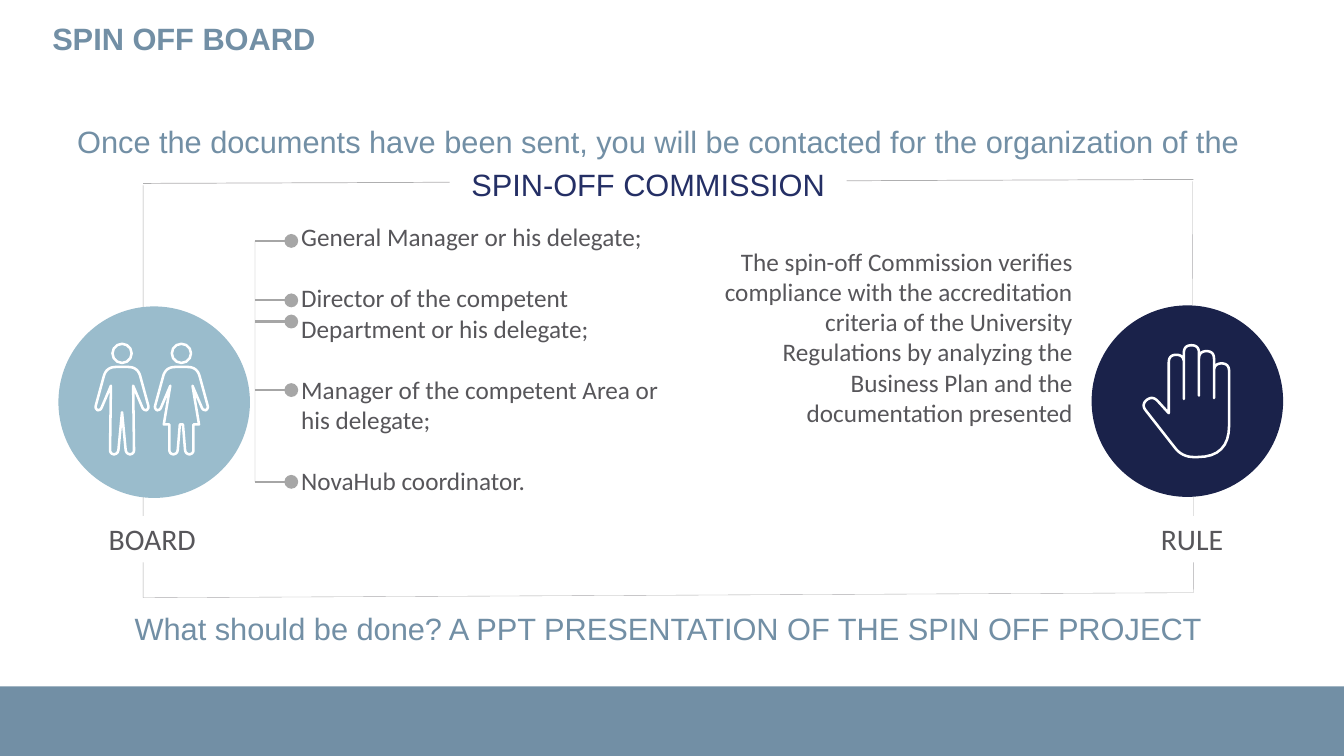
import math
from dataclasses import dataclass
from typing import Optional

import pptx
import pptx.dml.color
import pptx.enum.shapes
import pptx.enum.text
import pptx.oxml
import pptx.oxml.ns
import pptx.presentation
import pptx.shapes.autoshape
import pptx.shapes.base
import pptx.shapes.connector
import pptx.slide
import pptx.util

RGB = pptx.dml.color.RGBColor
SHAPE = pptx.enum.shapes.MSO_SHAPE
ALIGN = pptx.enum.text.PP_ALIGN
ANCHOR = pptx.enum.text.MSO_ANCHOR

STEEL = RGB(0x72, 0x8F, 0xA5)
SKY = RGB(0x9A, 0xBC, 0xCC)
NAVY = RGB(0x1A, 0x22, 0x4A)
INDIGO = RGB(0x24, 0x2F, 0x65)
GRAPHITE = RGB(0x57, 0x56, 0x5A)
CHARCOAL = RGB(0x39, 0x38, 0x3A)
SILVER = RGB(0xA6, 0xA6, 0xA6)
WHITE = RGB(0xFF, 0xFF, 0xFF)

# The slide is a grid of 40 columns by 22.5 rows of square cells.
COLUMNS, ROWS = 40, 22.5
CELL = pptx.util.Inches(1) / 3
BADGE = 5.7
ICON_STROKE = pptx.util.Pt(1.8)


def cells(count: float) -> pptx.util.Emu:
    return pptx.util.Emu(round(count * CELL))


@dataclass(frozen=True)
class Box:
    left: float
    top: float
    width: float
    height: float

    def emu(self) -> tuple[int, ...]:
        return tuple(cells(n) for n in (self.left, self.top, self.width, self.height))


@dataclass(frozen=True)
class Label:
    box: Box
    paragraphs: tuple[str, ...]
    size: float
    color: RGB
    font: str = "Arial"
    align: ALIGN = ALIGN.CENTER
    bold: bool = False
    wrap: bool = True
    fill: Optional[RGB] = None


@dataclass(frozen=True)
class Rule:
    start: tuple[float, float]
    end: tuple[float, float]
    color: RGB = GRAPHITE
    width: float = 0.25
    opacity: int = 50
    dot: bool = False


@dataclass(frozen=True)
class Corner:
    """A point in hundredths of a badge, rounded off over the given radius."""
    x: float
    y: float
    radius: float = 0


FRAME = (
    Rule((35.52, 5.34), (4.26, 5.46), CHARCOAL, 0.5, 40),
    Rule((4.26, 17.79), (4.26, 5.52)),
    Rule((35.52, 17.64), (35.49, 5.4)),
    Rule((4.26, 17.79), (35.52, 17.64)),
)
SPINE, DOT = 7.59, 8.67
DOT_ROWS = (7.17, 8.94, 9.57, 11.61, 14.34)
BRANCHES = (Rule((SPINE, DOT_ROWS[-1]), (SPINE, DOT_ROWS[0])),) + tuple(
    Rule((SPINE, row), (DOT, row), SILVER, 1.5, 100, True) for row in DOT_ROWS)

LABELS = (
    Label(Box(1.26, 0.45, 37.53, 2.76), ("SPIN OFF BOARD",), 22, STEEL,
          align=ALIGN.LEFT, bold=True),
    Label(Box(1.26, 15.36, 6.54, 1.38), ("BOARD",), 21.3, GRAPHITE, "Calibri", fill=WHITE),
    Label(Box(32.49, 15.36, 5.97, 1.38), ("RULE",), 21.3, GRAPHITE, "Calibri", fill=WHITE),
    Label(Box(13.38, 4.77, 11.82, 1.41), ("SPIN-OFF COMMISSION",), 22, INDIGO, fill=WHITE),
    Label(Box(21.18, 7.17, 11.04, 5.76), (
        "The spin-off Commission verifies compliance with the accreditation criteria of the "
        "University Regulations by analyzing the Business Plan and the documentation presented",
    ), 18, GRAPHITE, "Calibri", ALIGN.RIGHT),
    Label(Box(1.77, 3.51, 35.64, 1.41), (
        "Once the documents have been sent, you will be contacted for the organization of the",
    ), 22, STEEL, wrap=False),
    Label(Box(8.67, 6.45, 12.21, 8.49), (
        "General Manager or his delegate;",
        "Director of the competent Department or his delegate;",
        "Manager of the competent Area or his delegate;",
        "NovaHub coordinator.",
    ), 18, GRAPHITE, "Calibri", ALIGN.LEFT),
    Label(Box(1.68, 18, 36.42, 3.15), (
        "What should be done? A PPT PRESENTATION OF THE SPIN OFF PROJECT",
    ), 22, STEEL),
)

BOARD_BADGE = Box(1.74, 9.12, BADGE, BADGE)
RULE_BADGE = Box(32.49, 9.09, BADGE, BADGE)

# Right halves of the figures, measured from the axis of the body.
ARM = (Corner(8.2, 31.6, 5), Corner(14.2, 53.6, 2), Corner(11.4, 54.6, 2), Corner(5.8, 41.4))
FEET = (Corner(6.3, 77.2, 2.5), Corner(2.1, 77.2, 2.5))
MAN = ARM + FEET + (Corner(0, 55, 0.5),)
WOMAN = ARM + (Corner(9.2, 61.6), Corner(6.3, 61.6)) + FEET + (Corner(0.8, 61.6),)
FIGURES = ((33.2, MAN), (64.2, WOMAN))
HEAD_TOP, HEAD_SIZE = 19.5, 10

FINGER_LEFT, FINGER_WIDTH = 40.3, 7.88
FINGERS = ((25.8, 48.9), (20.8, 47.1), (23.9, 48.4))
PALM = (Corner(63.94, 30.3, 4), Corner(71.8, 30.3, 4), Corner(71.8, 79.2, 16.5),
        Corner(47.3, 79.2, 6), Corner(25.8, 51.7, 4), Corner(31.8, 47, 4))


def add_shape(slide: pptx.slide.Slide, kind: SHAPE, box: Box,
              fill: Optional[RGB]) -> pptx.shapes.autoshape.Shape:
    shape = slide.shapes.add_shape(kind, *box.emu())
    shape.shadow.inherit = False
    shape.line.fill.background()
    if fill is None:
        shape.fill.background()
    else:
        shape.fill.solid()
        shape.fill.fore_color.rgb = fill
    return shape


def add_label(slide: pptx.slide.Slide, label: Label) -> None:
    if label.fill is None:
        shape = slide.shapes.add_textbox(*label.box.emu())
    else:
        shape = add_shape(slide, SHAPE.RECTANGLE, label.box, label.fill)
    frame = shape.text_frame
    frame.word_wrap = label.wrap
    frame.vertical_anchor = ANCHOR.TOP
    for index, text in enumerate(label.paragraphs):
        paragraph = frame.add_paragraph() if index else frame.paragraphs[0]
        paragraph.alignment = label.align
        if index:
            paragraph.space_before = pptx.util.Pt(22)
        run = paragraph.add_run()
        run.text = text
        run.font.name = label.font
        run.font.size = pptx.util.Pt(label.size)
        run.font.bold = label.bold
        run.font.color.rgb = label.color


def add_rule(slide: pptx.slide.Slide, rule: Rule) -> None:
    ends = [cells(n) for n in rule.start + rule.end]
    connector = slide.shapes.add_connector(pptx.enum.shapes.MSO_CONNECTOR.STRAIGHT, *ends)
    connector.line.color.rgb = rule.color
    connector.line.width = pptx.util.Pt(rule.width)
    properties = connector.element.spPr
    outline = connector.line._get_or_add_ln()
    qualified = pptx.oxml.ns.qn
    if rule.opacity < 100:
        color = outline.find(".//" + qualified("a:srgbClr"))
        color.makeelement  # keeps the element bound while its child is added
        alpha = color.makeelement(qualified("a:alpha"), {"val": str(rule.opacity * 1000)})
        color.append(alpha)
    if rule.dot:
        outline.append(outline.makeelement(
            qualified("a:tailEnd"), {"type": "oval", "w": "lg", "len": "lg"}))
    properties.append(properties.makeelement(qualified("a:effectLst"), {}))


def rounded(corners: list[Corner], steps: int = 8) -> list[tuple[float, float]]:
    """Points of a closed outline, each corner replaced by a quadratic curve."""
    points = []
    for index, corner in enumerate(corners):
        if not corner.radius:
            points.append((corner.x, corner.y))
            continue
        ends = []
        for other in (corners[index - 1], corners[(index + 1) % len(corners)]):
            share = corner.radius / math.hypot(other.x - corner.x, other.y - corner.y)
            ends.append((corner.x + share * (other.x - corner.x),
                         corner.y + share * (other.y - corner.y)))
        (x0, y0), (x1, y1) = ends
        for t in (step / steps for step in range(steps + 1)):
            a, b, c = (1 - t) ** 2, 2 * t * (1 - t), t ** 2
            points.append((a * x0 + b * corner.x + c * x1, a * y0 + b * corner.y + c * y1))
    return points


def style_stroke(shape: pptx.shapes.autoshape.Shape) -> None:
    shape.shadow.inherit = False
    shape.fill.background()
    shape.line.color.rgb = WHITE
    shape.line.width = ICON_STROKE


def add_outline(slide: pptx.slide.Slide, badge: Box, corners: list[Corner]) -> None:
    points = [(cells(badge.left + x * BADGE / 100), cells(badge.top + y * BADGE / 100))
              for x, y in rounded(corners)]
    builder = slide.shapes.build_freeform(*points[0])
    builder.add_line_segments(points[1:], close=True)
    style_stroke(builder.convert_to_shape())


def add_people(slide: pptx.slide.Slide, badge: Box) -> None:
    unit = BADGE / 100
    for axis, half in FIGURES:
        head = Box(badge.left + (axis - HEAD_SIZE / 2) * unit, badge.top + HEAD_TOP * unit,
                   HEAD_SIZE * unit, HEAD_SIZE * unit)
        style_stroke(add_shape(slide, SHAPE.OVAL, head, None))
        right = [Corner(axis + c.x, c.y, c.radius) for c in half]
        left = [Corner(axis - c.x, c.y, c.radius) for c in reversed(half) if c.x]
        add_outline(slide, badge, right + left)


def add_hand(slide: pptx.slide.Slide, badge: Box) -> None:
    corners = [Corner(FINGER_LEFT, 56.3)]
    for index, (tip, base) in enumerate(FINGERS):
        left = FINGER_LEFT + index * FINGER_WIDTH
        right = left + FINGER_WIDTH
        corners += [Corner(left, tip, 4), Corner(right, tip, 4), Corner(right, base)]
    add_outline(slide, badge, corners + list(PALM))


def main() -> None:
    presentation = pptx.Presentation()
    presentation.slide_width, presentation.slide_height = cells(COLUMNS), cells(ROWS)
    slide = presentation.slides.add_slide(presentation.slide_layouts[6])
    add_shape(slide, SHAPE.RECTANGLE, Box(0, 20.43, COLUMNS, ROWS - 20.43), STEEL)
    for rule in FRAME:
        add_rule(slide, rule)
    add_shape(slide, SHAPE.OVAL, BOARD_BADGE, SKY)
    add_shape(slide, SHAPE.OVAL, RULE_BADGE, NAVY)
    for label in LABELS:
        add_label(slide, label)
    for branch in BRANCHES:
        add_rule(slide, branch)
    add_people(slide, BOARD_BADGE)
    add_hand(slide, RULE_BADGE)
    presentation.save("out.pptx")


if __name__ == "__main__":
    main()
